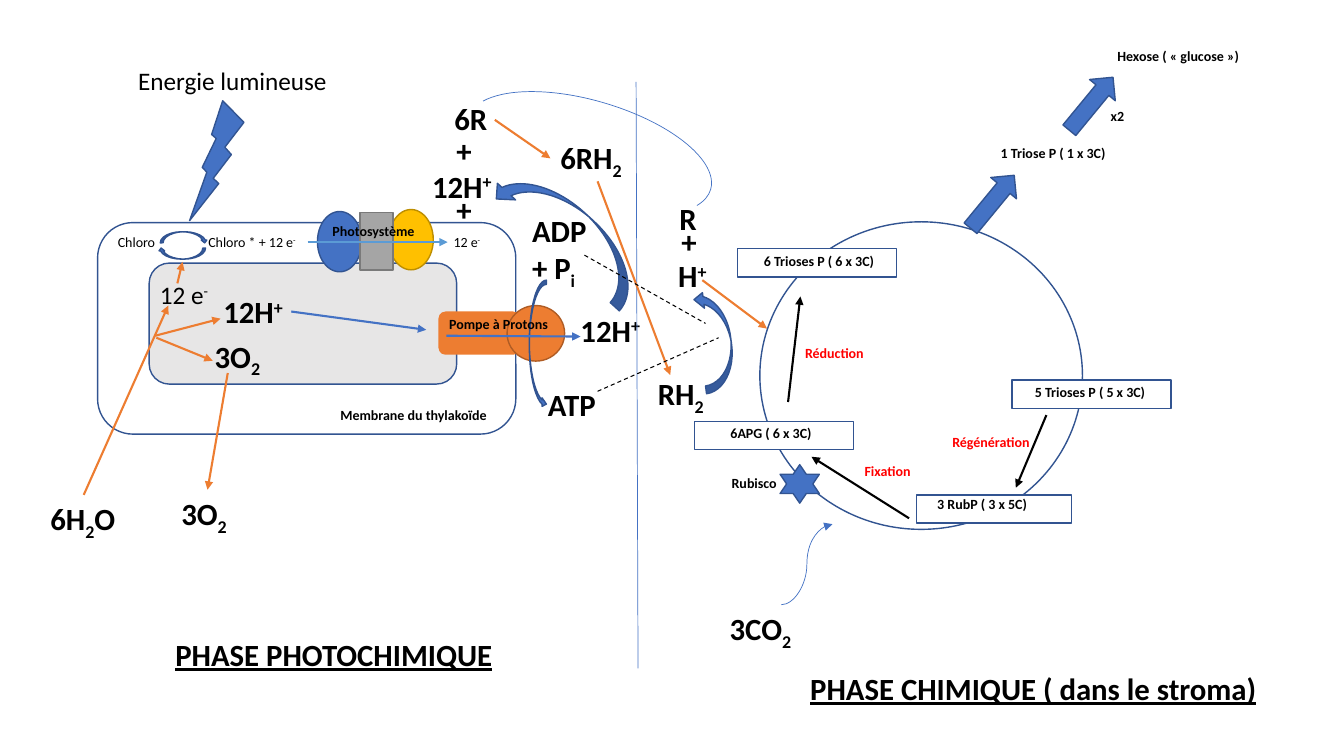
from lxml import etree
from pptx import Presentation
from pptx import util as u
from pptx.dml.color import RGBColor
from pptx.enum import dml, shapes, text
from pptx.oxml import ns

BLUE, NAVY, ORANGE, WHITE, BLACK, RED = "4472C4", "325491", "ED7D31", "FFFFFF", "000000", "FF0000"
KIND = shapes.MSO_SHAPE
LINE = shapes.MSO_CONNECTOR


def color(value):
    return RGBColor.from_string(value)


def add_child(parent, tag, **attributes):
    return etree.SubElement(parent, ns.qn(tag), **attributes)


presentation = Presentation()
presentation.slide_width = u.Cm(33.87)
presentation.slide_height = u.Cm(19.05)
slide = presentation.slides.add_slide(presentation.slide_layouts[6])

figures = [
    (KIND.ROUNDED_RECTANGLE, 2.46, 5.61, 10.54, 5.33, 0, WHITE, NAVY),
    (KIND.ROUNDED_RECTANGLE, 3.76, 6.63, 7.75, 3.05, 0, "E7E6E6", NAVY),
    (KIND.OVAL, 8, 5.33, 1.12, 1.52, 0, BLUE, NAVY),
    (KIND.OVAL, 9.8, 5.28, 1.12, 1.52, 0, "FFC000", "BD8E00"),
    (KIND.RECTANGLE, 9.07, 5.36, 0.84, 1.45, 0, "A5A5A5", "7A7A7A"),
    (KIND.ROUNDED_RECTANGLE, 11.05, 7.85, 2.06, 1.09, 0, ORANGE, None),
    (KIND.OVAL, 12.78, 7.7, 1.45, 1.4, 0, ORANGE, "AF5C24"),
    (KIND.OVAL, 19.15, 5.59, 8.13, 7.75, 0, WHITE, NAVY),
    (KIND.RECTANGLE, 17.5, 10.62, 4.01, 0.71, 0, WHITE, NAVY),
    (KIND.RECTANGLE, 23.1, 12.47, 3.91, 0.71, 0, WHITE, NAVY),
    (KIND.RECTANGLE, 25.5, 9.58, 4.01, 0.71, 0, WHITE, NAVY),
    (KIND.RECTANGLE, 18.59, 6.27, 4.01, 0.71, 0, WHITE, NAVY),
    (KIND.STAR_6_POINT, 19.66, 11.71, 0.99, 0.97, 0, BLUE, NAVY),
    (KIND.LIGHTNING_BOLT, 4.78, 2.54, 1.37, 3.02, 0, BLUE, NAVY),
    (KIND.CURVED_DOWN_ARROW, 4.04, 5.84, 1.19, 0.28, 0, BLUE, NAVY),
    (KIND.CURVED_DOWN_ARROW, 3.99, 6.25, 1.19, 0.28, 180, BLUE, NAVY),
    (KIND.CURVED_RIGHT_ARROW, 13.34, 7.06, 0.43, 3.23, 0, BLUE, NAVY),
    (KIND.CURVED_RIGHT_ARROW, 13.74, 3.61, 1.24, 4.5, 132.3, BLUE, NAVY),
    (KIND.CURVED_RIGHT_ARROW, 17.63, 7.29, 0.79, 2.59, 172.4, BLUE, NAVY),
    (KIND.UP_ARROW, 24.59, 4.22, 0.84, 1.73, 39.5, BLUE, NAVY),
    (KIND.UP_ARROW, 27.08, 1.75, 0.84, 1.73, 39.5, BLUE, NAVY),
    (KIND.ARC, 11.66, 2.54, 6.38, 2.67, 16.4, None, BLUE),
]
for kind, left, top, width, height, rotation, fill, outline in figures:
    shape = slide.shapes.add_shape(kind, u.Cm(left), u.Cm(top), u.Cm(width), u.Cm(height))
    shape.shadow.inherit = False
    shape.rotation = rotation
    if fill:
        shape.fill.solid()
        shape.fill.fore_color.rgb = color(fill)
    else:
        shape.fill.background()
    if outline:
        shape.line.color.rgb = color(outline)
        shape.line.width = u.Pt(1)
    else:
        shape.line.fill.background()
    if kind == KIND.LIGHTNING_BOLT:
        shape.element.spPr.xfrm.set("flipH", "1")
    if kind == KIND.ARC:
        shape.line.width = u.Pt(0.5)
        shape.adjustments[0] = 113.985
        shape.adjustments[1] = 5.568
    if rotation == 172.4:
        shape.adjustments[2] = 0.296

labels = [
    ("Energie lumineuse", 3.23, 1.52, 5.33, 18, False, BLACK),
    ("12 e|^-", 3.78, 6.91, 1.78, 18, False, BLACK),
    ("Chloro\tChloro * + 12 e|^-", 2.72, 5.77, 5.05, 10, False, BLACK),
    ("12 e|^-", 11.18, 5.77, 1.27, 10, False, BLACK),
    ("Pompe à Protons", 11.07, 7.82, 3.05, 10, True, BLACK),
    ("Photosystème", 8.13, 5.49, 2.62, 10, True, BLACK),
    ("Rubisco", 18.19, 11.84, 1.68, 10, True, BLACK),
    ("Membrane du thylakoïde", 8.33, 10.13, 4.27, 10, True, BLACK),
    ("6APG ( 6 x 3C)", 18.16, 10.57, 2.59, 10, True, BLACK),
    ("6 Trioses P ( 6 x 3C)", 19, 6.25, 3.35, 10, True, BLACK),
    ("5 Trioses P ( 5 x 3C)", 25.83, 9.53, 3.35, 10, True, BLACK),
    ("3 RubP ( 3 x 5C)", 23.37, 12.37, 2.82, 10, True, BLACK),
    ("1 Triose P ( 1 x 3C)", 24.97, 3.51, 3.2, 10, True, BLACK),
    ("Hexose ( « glucose »)", 27.91, 1.07, 3.63, 10, True, BLACK),
    ("x2", 27.74, 2.59, 0.86, 10, True, BLACK),
    ("Réduction", 20.04, 8.56, 2.01, 10, True, RED),
    ("Régénération", 23.75, 10.8, 2.51, 10, True, RED),
    ("Fixation", 21.54, 11.53, 1.7, 10, True, RED),
    ("6H|_2|O", 1.02, 12.47, 2.21, 22, True, BLACK),
    ("3CO|_2", 18.14, 15.24, 2.21, 22, True, BLACK),
    ("ADP + P|_i", 13.16, 5.21, 1.91, 22, True, BLACK),
    ("6R", 11.2, 2.39, 1.37, 22, True, BLACK),
    ("3O|_2", 5.16, 8.38, 1.85, 22, True, BLACK),
    ("3O|_2", 4.32, 12.34, 1.85, 22, True, BLACK),
    ("12H|^+", 5.38, 7.26, 2.39, 22, True, BLACK),
    ("12H|^+", 14.38, 7.72, 2.39, 22, True, BLACK),
    ("12H|^+", 10.64, 4.09, 2.39, 22, True, BLACK),
    ("6RH|_2", 13.87, 3.38, 2.36, 22, True, BLACK),
    ("ATP", 13.56, 9.6, 1.91, 22, True, BLACK),
    ("+", 11.25, 3.2, 1.04, 22, True, BLACK),
    ("+", 11.25, 4.67, 1.04, 22, True, BLACK),
    ("+", 16.92, 5.49, 1.04, 22, True, BLACK),
    ("R", 16.87, 4.9, 0.95, 22, True, BLACK),
    ("H|^+", 16.84, 6.35, 1.35, 22, True, BLACK),
    ("RH|_2", 16.33, 9.32, 1.78, 22, True, BLACK),
    ("PHASE PHOTOCHIMIQUE", 4.17, 15.9, 8.81, 22, True, BLACK),
    ("PHASE CHIMIQUE ( dans le stroma)", 20.17, 16.74, 12.45, 22, True, BLACK),
]
heights = {10: 0.69, 18: 1.02, 22: 1.19}
baselines = {"_": "-25000", "^": "30000"}
for content, left, top, width, size, bold, ink in labels:
    height = heights[size] * (1.8 if content.startswith("ADP") else 1)
    box = slide.shapes.add_textbox(u.Cm(left), u.Cm(top), u.Cm(width), u.Cm(height))
    box.text_frame.word_wrap = size == 22 or not bold
    box.text_frame.auto_size = text.MSO_AUTO_SIZE.SHAPE_TO_FIT_TEXT
    paragraph = box.text_frame.paragraphs[0]
    if "\t" in content:
        tabs = add_child(paragraph._p.get_or_add_pPr(), "a:tabLst")
        add_child(tabs, "a:tab", pos=str(u.Cm(2.28)), algn="l")
    for piece in content.split("|"):
        run = paragraph.add_run()
        run.text = piece.lstrip("_^")
        run.font.name = "Calibri"
        run.font.size = u.Pt(size)
        run.font.bold = bold
        run.font.color.rgb = color(ink)
        if content.startswith("PHASE"):
            run.font.underline = True
        if piece[0] in baselines:
            run._r.get_or_add_rPr().set("baseline", baselines[piece[0]])

links = [
    (LINE.STRAIGHT, 16.03, 2.06, 16.08, 16.84, BLUE, 0.5, False),
    (LINE.CURVE, 19.69, 15.24, 20.98, 13.21, BLUE, 0.5, True),
    (LINE.STRAIGHT, 2.11, 12.47, 4.24, 7.7, ORANGE, 1.5, True),
    (LINE.STRAIGHT, 3.91, 8.46, 5.56, 8.03, ORANGE, 1.5, True),
    (LINE.STRAIGHT, 3.94, 8.51, 5.36, 9.09, ORANGE, 1.5, True),
    (LINE.STRAIGHT, 5.74, 9.4, 5.23, 12.34, ORANGE, 1.5, True),
    (LINE.STRAIGHT, 4.47, 7.14, 4.6, 6.6, ORANGE, 1.5, True),
    (LINE.STRAIGHT, 12.47, 3.02, 13.87, 3.99, ORANGE, 1.5, True),
    (LINE.STRAIGHT, 15.06, 4.57, 16.89, 9.45, ORANGE, 1.5, True),
    (LINE.STRAIGHT, 17.7, 7.06, 19.33, 8.28, ORANGE, 1.5, True),
    (LINE.STRAIGHT, 7.75, 6.1, 11.28, 6.1, "5B9BD5", 1.5, True),
    (LINE.STRAIGHT, 7.34, 7.85, 10.74, 8.31, BLUE, 1.5, True),
    (LINE.STRAIGHT, 11.25, 8.46, 14.63, 8.48, BLUE, 1.5, True),
    (LINE.STRAIGHT, 19.86, 10.13, 20.17, 7.47, BLACK, 1.5, True),
    (LINE.STRAIGHT, 26.37, 10.46, 25.6, 12.29, BLACK, 1.5, True),
    (LINE.STRAIGHT, 22.91, 13.06, 20.45, 11.51, BLACK, 1.5, True),
    (LINE.STRAIGHT, 15.06, 9.86, 18.11, 8.51, BLACK, 0.75, False),
    (LINE.STRAIGHT, 14.73, 6.43, 17.78, 8.15, BLACK, 0.75, False),
]
for kind, x1, y1, x2, y2, ink, weight, arrow in links:
    connector = slide.shapes.add_connector(kind, u.Cm(x1), u.Cm(y1), u.Cm(x2), u.Cm(y2))
    connector.line.color.rgb = color(ink)
    connector.line.width = u.Pt(weight)
    if weight == 0.75:
        connector.line.dash_style = dml.MSO_LINE.DASH
    if arrow:
        add_child(connector.line._get_or_add_ln(), "a:tailEnd", type="triangle")
    add_child(connector._element.spPr, "a:effectLst")

presentation.save("out.pptx")
